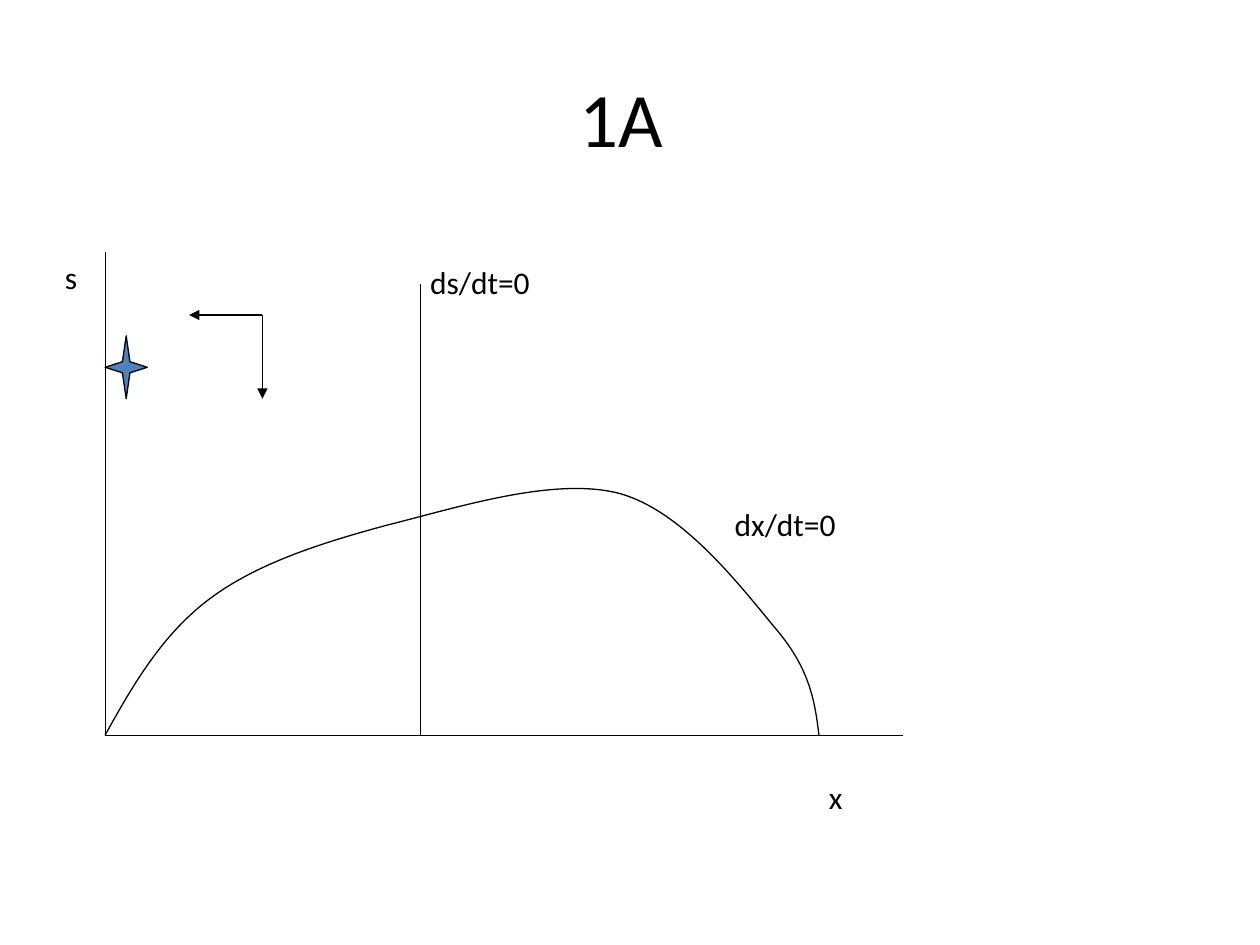
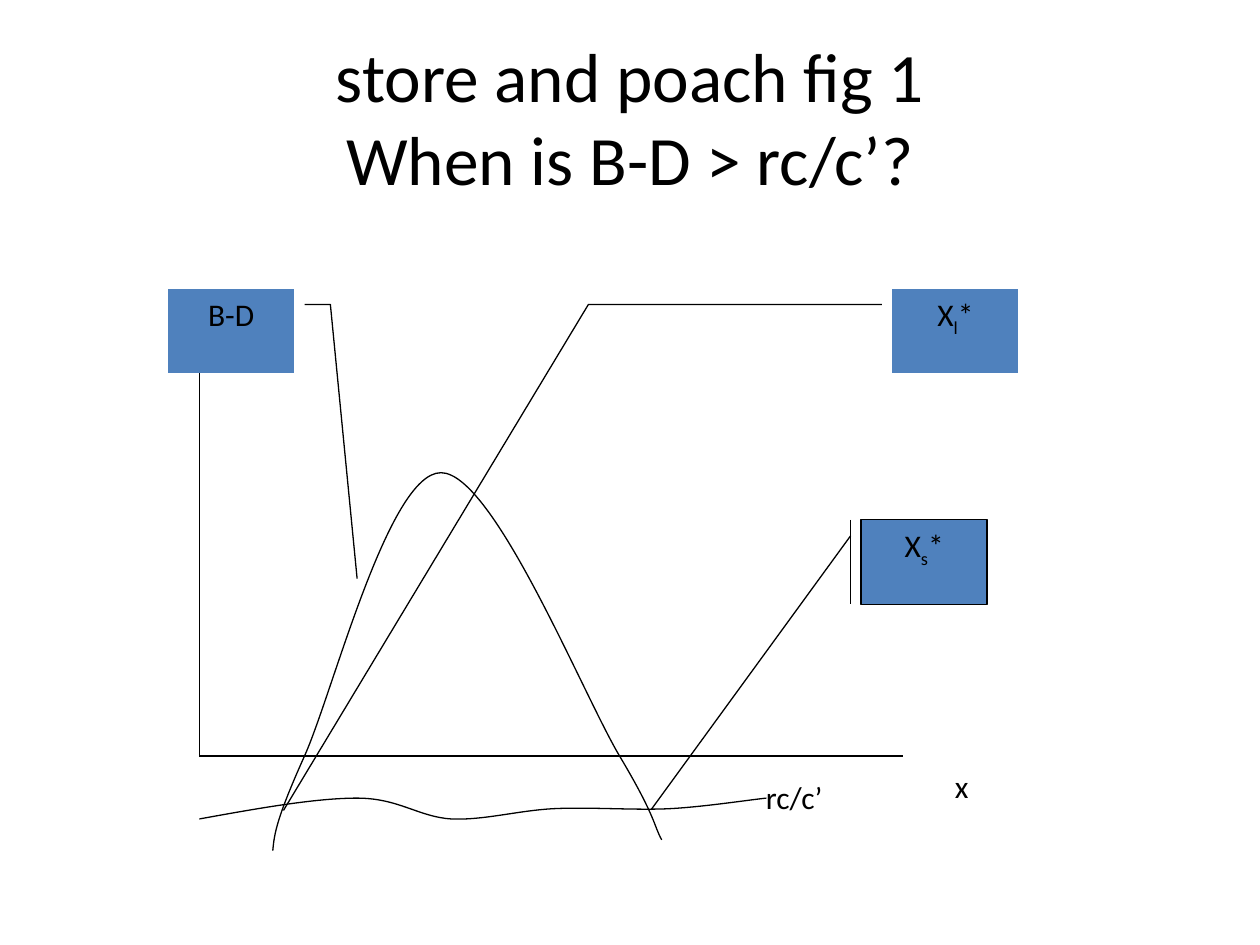
from dataclasses import dataclass

from lxml import etree
from pptx import Presentation
from pptx.dml.color import RGBColor
from pptx.enum.shapes import MSO_CONNECTOR, MSO_SHAPE
from pptx.enum.text import MSO_ANCHOR, MSO_AUTO_SIZE, PP_ALIGN
from pptx.oxml.ns import qn
from pptx.util import Cm, Pt


@dataclass(frozen=True)
class Theme:
    font: str = "Calibri"
    ink: RGBColor = RGBColor(0x00, 0x00, 0x00)
    accent: RGBColor = RGBColor(0x4F, 0x81, 0xBD)
    title_size: float = 44
    long_title_size: float = 39.6
    label_size: float = 18
    line_width: float = 0.75
    label_height: float = 1.02


THEME = Theme()


def add_span(para, text, size=THEME.label_size, subscript=False):
    span = para.add_run()
    span.text = text
    span.font.name = THEME.font
    span.font.size = Pt(size)
    span.font.color.rgb = THEME.ink
    if subscript:
        span.font._element.set("baseline", "-25000")


def ink_line(item):
    item.line.color.rgb = THEME.ink
    item.line.width = Pt(THEME.line_width)


def add_title(page, lines, size):
    box = page.shapes.add_textbox(Cm(1.27), Cm(0.76), Cm(22.86), Cm(3.18))
    frame = box.text_frame
    frame.word_wrap = True
    frame.vertical_anchor = MSO_ANCHOR.MIDDLE
    para = frame.paragraphs[0]
    para.alignment = PP_ALIGN.CENTER
    for index, line in enumerate(lines):
        if index:
            para.add_line_break()
        add_span(para, line, size)


def add_label(page, text, left, top, width=0.84):
    box = page.shapes.add_textbox(
        Cm(left), Cm(top), Cm(width), Cm(THEME.label_height))
    box.text_frame.word_wrap = False
    box.text_frame.auto_size = MSO_AUTO_SIZE.SHAPE_TO_FIT_TEXT
    add_span(box.text_frame.paragraphs[0], text)


def add_line(page, start, end, arrow=False):
    line = page.shapes.add_connector(
        MSO_CONNECTOR.STRAIGHT, *map(Cm, start), *map(Cm, end))
    ink_line(line)
    if arrow:
        etree.SubElement(line.line._get_or_add_ln(), qn("a:tailEnd"), type="triangle")
    etree.SubElement(line._element.spPr, qn("a:effectLst"))


def add_axes(page, top, origin, right):
    left, bottom = origin
    add_line(page, (left, top), origin)
    add_line(page, origin, (right, bottom))


def bend_segments(outline):
    """Turn every three straight segments into one cubic arc."""
    segments = list(outline.iter(qn("a:lnTo")))
    for first in range(0, len(segments), 3):
        arc = etree.Element(qn("a:cubicBezTo"))
        segments[first].addprevious(arc)
        for segment in segments[first:first + 3]:
            arc.append(segment[0])
            segment.getparent().remove(segment)


def add_curve(page, points):
    """Draw joined cubic arcs: a start, then two controls and an end per arc."""
    start, *others = [tuple(map(Cm, point)) for point in points]
    builder = page.shapes.build_freeform(*start)
    builder.add_line_segments(others, close=False)
    curve = builder.convert_to_shape()
    bend_segments(curve._element)
    curve.shadow.inherit = False
    curve.fill.background()
    ink_line(curve)


def add_accent_shape(page, kind, place, adjustments):
    shape = page.shapes.add_shape(kind, *map(Cm, place))
    shape.shadow.inherit = False
    shape.fill.solid()
    shape.fill.fore_color.rgb = THEME.accent
    ink_line(shape)
    for index, value in enumerate(adjustments):
        shape.adjustments[index] = value
    return shape


def add_callout(page, kind, left, top, adjustments, name, subscript=""):
    shape = add_accent_shape(page, kind, (left, top, 2.54, 1.7), adjustments)
    shape.text_frame.vertical_anchor = MSO_ANCHOR.TOP
    para = shape.text_frame.paragraphs[0]
    para.alignment = PP_ALIGN.CENTER
    add_span(para, name)
    if subscript:
        add_span(para, subscript, subscript=True)
        add_span(para, "*")


def build_phase_plane(page):
    add_title(page, ["1A "], THEME.title_size)
    add_label(page, "s", 1.06, 5.08)
    origin = (2.12, 14.82)
    add_axes(page, 5.08, origin, 18.2)
    add_line(page, (8.47, 14.82), (8.47, 5.72))
    add_curve(page, [
        origin,
        (2.69, 13.79), (3.28, 12.78), (4.23, 12.07),
        (5.18, 11.36), (6.46, 10.95), (7.83, 10.58),
        (9.2, 10.24), (11.17, 9.6), (12.49, 9.95),
        (13.8, 10.31), (14.98, 11.89), (15.66, 12.7),
        (16.34, 13.51), (16.43, 14.17), (16.51, 14.82)])
    flow_corner = (5.29, 6.35)
    for arrow_tip in ((3.81, 6.35), (5.29, 8.04)):
        add_line(page, flow_corner, arrow_tip, arrow=True)
    add_accent_shape(page, MSO_SHAPE.STAR_4_POINT, (2.12, 6.77, 0.85, 1.27), [0.125])
    add_label(page, "x", 16.46, 15.56)
    add_label(page, "ds/dt=0", 8.42, 5.18, 2.62)
    add_label(page, "dx/dt=0", 14.56, 10.06, 2.62)


def build_store_and_poach(page):
    add_title(page, ["store and poach fig 1", "When is B-D > rc/c’?"],
              THEME.long_title_size)
    add_axes(page, 7.41, (4.02, 15.24), 18.2)
    add_curve(page, [
        (5.5, 17.15),
        (5.53, 16.81), (5.57, 16.51), (6.14, 15.24),
        (6.71, 13.97), (7.83, 9.53), (8.89, 9.53),
        (9.95, 9.53), (11.75, 14), (12.49, 15.24),
        (13.23, 16.48), (13.18, 16.65), (13.34, 16.93)])
    add_curve(page, [
        (4.02, 16.51),
        (5.18, 16.3), (6.35, 16.09), (7.2, 16.09),
        (8.04, 16.09), (8.44, 16.47), (9.1, 16.51),
        (9.77, 16.54), (10.48, 16.33), (11.22, 16.3),
        (11.96, 16.27), (12.86, 16.34), (13.55, 16.3),
        (14.24, 16.26), (15.14, 16.12), (15.45, 16.09)])
    add_callout(page, MSO_SHAPE.LINE_CALLOUT_1_BORDER_AND_ACCENT_BAR, 17.36, 10.48,
                (0.188, -0.083, 3.438, -1.667), "X", "s")
    add_callout(page, MSO_SHAPE.LINE_CALLOUT_2_NO_BORDER, 17.99, 5.82,
                (0.188, -0.083, 0.188, -2.413, 6.188, -4.833), "X", "l")
    add_label(page, "rc/c’", 15.19, 15.56, 1.68)
    add_callout(page, MSO_SHAPE.LINE_CALLOUT_2_NO_BORDER, 3.39, 5.82,
                (0.188, 1.083, 0.188, 1.288, 3.438, 1.5), "B-D")
    add_label(page, "x", 19, 15.34)


def main():
    deck = Presentation()
    deck.slide_width, deck.slide_height = Cm(25.4), Cm(19.05)
    blank = deck.slide_layouts[6]
    for build in (build_phase_plane, build_store_and_poach):
        build(deck.slides.add_slide(blank))
    deck.save("out.pptx")


if __name__ == "__main__":
    main()
